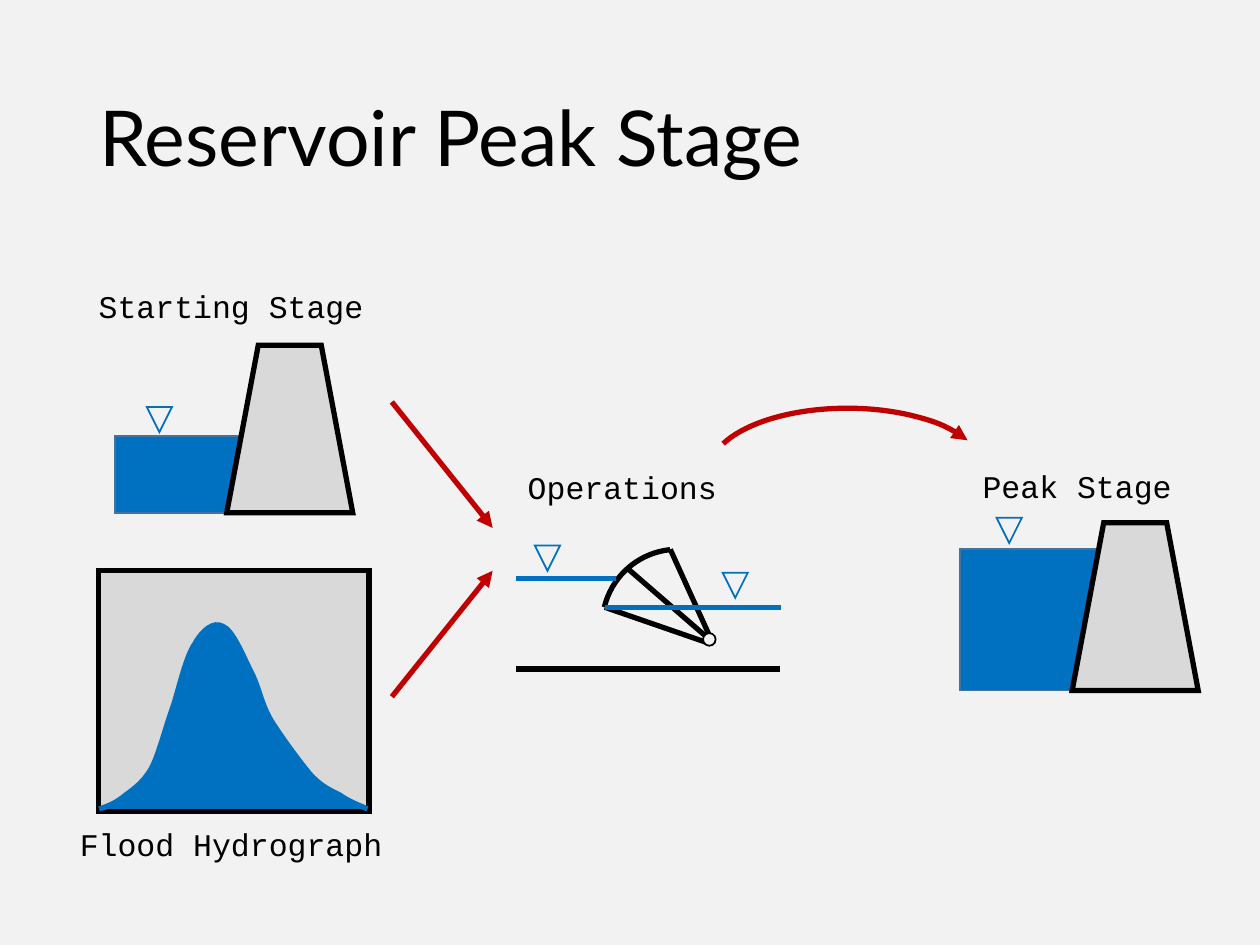
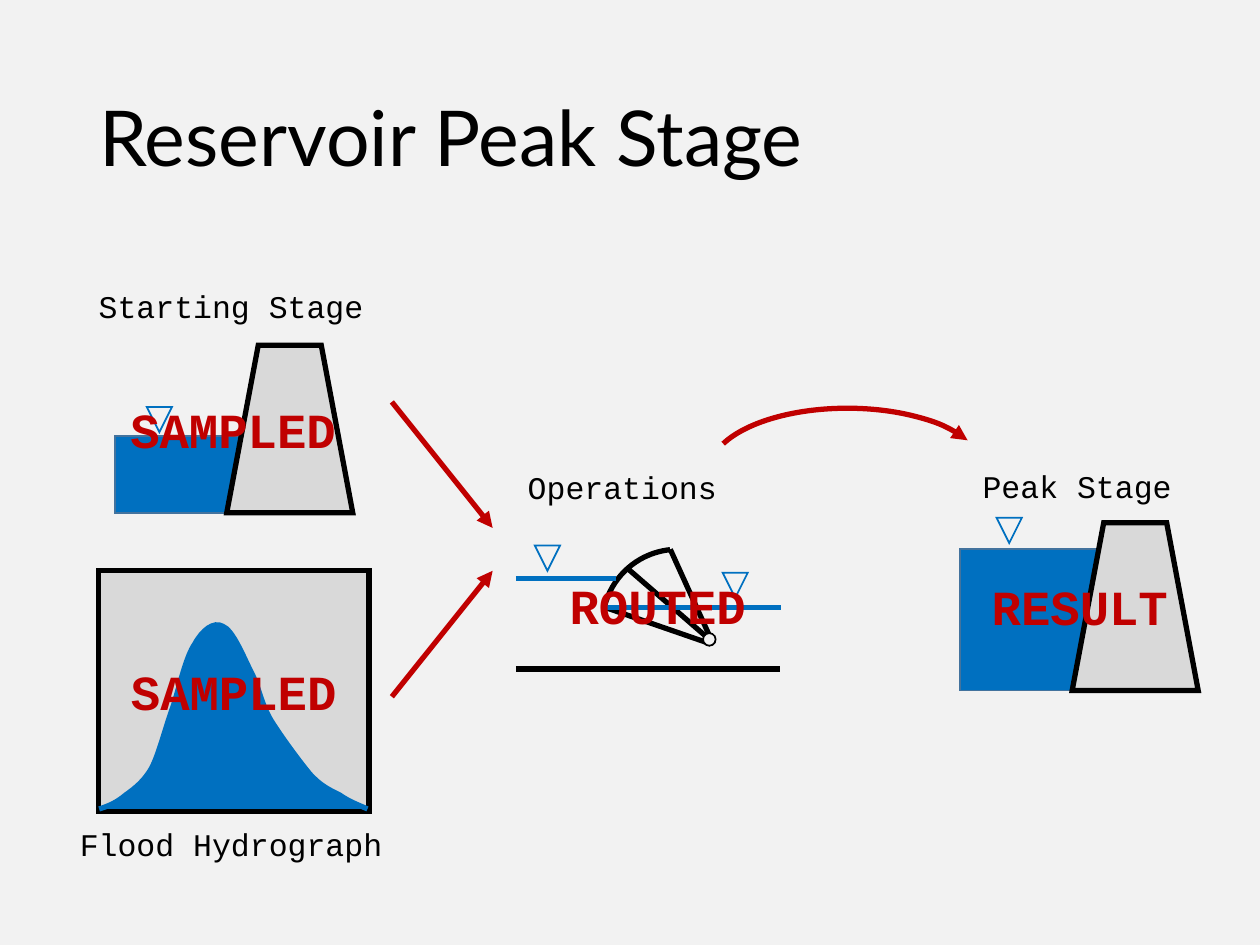
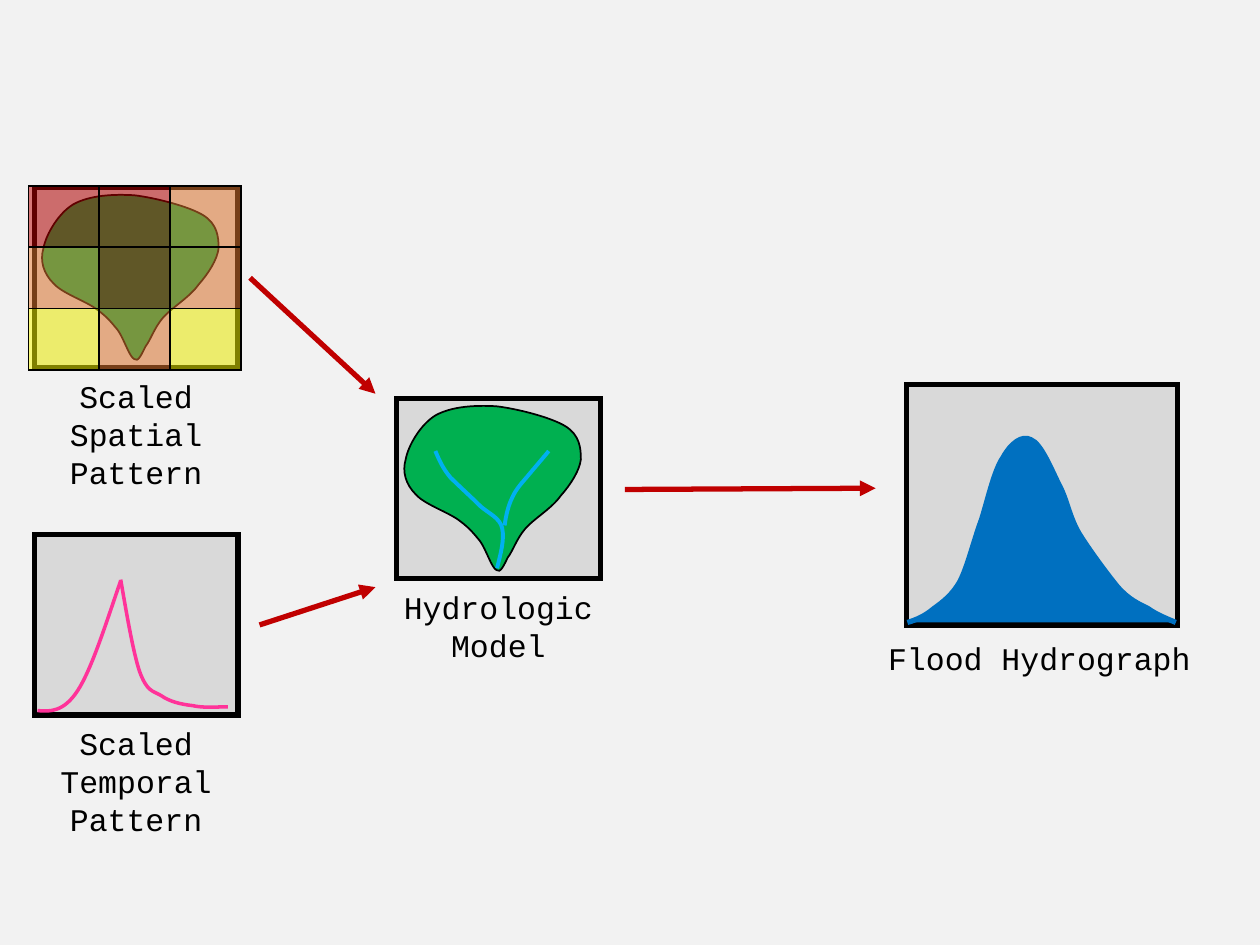
import pptx
import pptx.dml.color
import pptx.enum.shapes
import pptx.enum.text
import pptx.oxml
import pptx.oxml.ns
import pptx.util

RGB = pptx.dml.color.RGBColor
SHAPE = pptx.enum.shapes.MSO_SHAPE
ALIGN = pptx.enum.text.PP_ALIGN
ANCHOR = pptx.enum.text.MSO_ANCHOR
qn = pptx.oxml.ns.qn

# Colours
PAPER = RGB(0xF2, 0xF2, 0xF2)
INK = RGB(0x00, 0x00, 0x00)
GREY = RGB(0xD9, 0xD9, 0xD9)
WATER = RGB(0x00, 0x70, 0xC0)
WATER_EDGE = RGB(0x43, 0x73, 0x9E)
RED = RGB(0xC0, 0x00, 0x00)
ORANGE = RGB(0xED, 0x7D, 0x31)
YELLOW = RGB(0xFF, 0xFF, 0x00)
GREEN = RGB(0x00, 0xB0, 0x50)
STREAM = RGB(0x00, 0xB0, 0xF0)
PINK = RGB(0xFF, 0x33, 0x99)

# Grid of square cells over a 10 x 7.5 inch slide
COLS, ROWS = 100, 75
THICK, THIN = 3, 1

# Curves as a start point followed by Bezier triples, relative to their frame
FLOOD = [
    (0, 18.9), (0.7, 18.7), (1.4, 18.4), (2.1, 17.8), (2.8, 17.3), (3.6, 16.7),
    (4.2, 15.6), (4.8, 14.4), (5.3, 12.3), (5.9, 10.7), (6.4, 9.1), (6.9, 6.8),
    (7.6, 5.8), (8.2, 4.7), (9.1, 4), (9.8, 4.4), (10.6, 4.7), (11.4, 6.7),
    (12, 7.9), (12.7, 9.2), (12.8, 10.4), (13.6, 11.8), (14.4, 13.1), (15.8, 15),
    (16.7, 16.1), (17.6, 17.1), (18.3, 17.4), (19.1, 17.8), (19.8, 18.3),
    (20.6, 18.6), (21.3, 18.9)]
BASIN = [
    (7.9, 13.6), (7.5, 13.4), (7.1, 12), (6.6, 11.3), (6.1, 10.7), (5.8, 10.3),
    (5, 9.7), (4.1, 9), (2.2, 8.4), (1.5, 7.6), (0.7, 6.8), (0.4, 5.8),
    (0.7, 4.8), (0.9, 3.7), (1.9, 2), (3.1, 1.3), (4.4, 0.6), (6.2, 0.5),
    (7.9, 0.6), (9.6, 0.8), (12.3, 1.5), (13.4, 2.2), (14.5, 2.9), (14.6, 3.9),
    (14.6, 4.8), (14.5, 5.7), (13.8, 6.8), (13, 7.7), (12.3, 8.7), (10.9, 9.5),
    (10.2, 10.3), (9.5, 11.1), (9.2, 12.1), (8.8, 12.6), (8.5, 13.2),
    (8.2, 13.9), (7.9, 13.6)]
MAIN_STREAM = [
    (8, 13.4), (8.3, 12.2), (8.6, 11.1), (8.4, 10.2), (8.2, 9.4), (7.4, 9.1),
    (6.7, 8.5), (6, 7.8), (5, 6.9), (4.3, 6.2), (3.7, 5.5), (3.4, 4.8), (3.1, 4.1)]
BRANCH = [
    (8.6, 10), (8.7, 9.2), (8.9, 8.4), (9.2, 7.8), (9.5, 7.1), (10, 6.6),
    (10.5, 6), (11, 5.4), (11.6, 4.7), (12.1, 4.1)]
RISING_RAIN = [
    (0.3, 13.9), (1.3, 14), (2.4, 14), (3.5, 12.3), (4.6, 10.6), (5.7, 7.1), (6.9, 3.6)]
FALLING_RAIN = [
    (6.9, 3.5), (7.4, 6.4), (7.9, 9.3), (8.4, 10.8), (9, 12.4), (9.4, 12.3),
    (10.1, 12.7), (10.8, 13.2), (11.7, 13.4), (12.6, 13.5), (13.5, 13.7),
    (14.4, 13.6), (15.4, 13.6)]


def xml(tag, attributes=""):
    return pptx.oxml.parse_xml("<a:%s %s %s/>" % (tag, pptx.oxml.ns.nsdecls("a"), attributes))


def bend(sp):
    """Turn each three line segments of a freeform into one Bezier curve."""
    segments = list(sp.element.iter(qn("a:lnTo")))
    for i in range(0, len(segments), 3):
        bezier = xml("cubicBezTo")
        segments[i].addprevious(bezier)
        for segment in segments[i:i + 3]:
            bezier.append(segment[0])
            segment.getparent().remove(segment)


class Deck:
    """Holds the style and the slide, or group, being drawn on."""

    def __init__(self):
        self.prs = pptx.Presentation()
        self.prs.slide_width = pptx.util.Inches(10)
        self.prs.slide_height = pptx.util.Inches(7.5)

    def new_slide(self):
        self.slide = self.prs.slides.add_slide(self.prs.slide_layouts[6])
        self.slide.background.fill.solid()
        self.slide.background.fill.fore_color.rgb = PAPER
        self.end_group()

    def group(self):
        self.shapes = self.slide.shapes.add_group_shape().shapes

    def end_group(self):
        self.shapes = self.slide.shapes

    def emu(self, *lengths):
        """Grid units to EMU, taken alternately across and down."""
        cell = (self.prs.slide_width / COLS, self.prs.slide_height / ROWS)
        return [round(v * cell[i % 2]) for i, v in enumerate(lengths)]

    def stroke(self, sp, color, width, arrow=False):
        sp.line.color.rgb = color
        sp.line.width = pptx.util.Pt(width)
        ln = sp.element.spPr.find(qn("a:ln"))
        ln.append(xml("miter", 'lim="800000"'))
        if arrow:
            ln.append(xml("tailEnd", 'type="triangle"'))

    def paint(self, sp, fill, color, width, alpha=None, arrow=False):
        sp.shadow.inherit = False
        if fill is None:
            sp.fill.background()
        else:
            sp.fill.solid()
            sp.fill.fore_color.rgb = fill
        if alpha is not None:
            clr = sp.element.spPr.find(qn("a:solidFill"))[0]
            clr.append(xml("alpha", 'val="%d"' % (alpha * 1000)))
        self.stroke(sp, color, width, arrow)
        return sp

    def shape(self, kind, x, y, w, h, fill=None, color=INK, width=THICK, alpha=None):
        sp = self.shapes.add_shape(kind, *self.emu(x, y, w, h))
        return self.paint(sp, fill, color, width, alpha)

    def arc(self, x, y, w, h, start, end, color=INK, arrow=False):
        sp = self.shapes.add_shape(SHAPE.ARC, *self.emu(x, y, w, h))
        for i, degrees in enumerate((start, end)):
            sp.adjustments[i] = degrees * 0.6
        self.paint(sp, None, color, THICK, arrow=arrow)

    def curve(self, x, y, points, fill=None, color=INK, width=THICK, close=False):
        first, *rest = [self.emu(x + px, y + py) for px, py in points]
        builder = self.shapes.build_freeform(*first, scale=1.0)
        builder.add_line_segments(rest, close=close)
        sp = builder.convert_to_shape()
        bend(sp)
        self.paint(sp, fill, color, width)

    def line(self, x1, y1, x2, y2, color=INK, arrow=False):
        kind = pptx.enum.shapes.MSO_CONNECTOR.STRAIGHT
        sp = self.shapes.add_connector(kind, *self.emu(x1, y1, x2, y2))
        self.stroke(sp, color, THICK, arrow)
        sp.element.spPr.append(xml("effectLst"))

    def arrow(self, x1, y1, x2, y2):
        self.line(x1, y1, x2, y2, RED, arrow=True)

    def text(self, words, x, y, w, h, size=18, font="Courier New", color=INK, bold=False,
             align=ALIGN.LEFT, anchor=ANCHOR.TOP, wrap=False, spacing=None):
        tf = self.shapes.add_textbox(*self.emu(x, y, w, h)).text_frame
        tf.word_wrap = wrap
        tf.vertical_anchor = anchor
        p = tf.paragraphs[0]
        p.alignment = align
        p.line_spacing = spacing
        r = p.add_run()
        r.text = words
        r.font.size = pptx.util.Pt(size)
        r.font.name = font
        r.font.bold = bold
        r.font.color.rgb = color

    def title(self, words):
        self.text(words, 6.88, 4, 86.25, 14.5, size=44, font="Lato",
                  anchor=ANCHOR.MIDDLE, wrap=True, spacing=0.9)

    def label(self, words, x, y, w):
        self.text(words, x, y, w, 4)

    def caption(self, words, x, y, w, h):
        self.text(words, x, y, w, h, align=ALIGN.CENTER, wrap=True)

    def stamp(self, words, x, y, w):
        self.text(words, x, y, w, 5.7, size=28, color=RED, bold=True,
                  align=ALIGN.CENTER, anchor=ANCHOR.MIDDLE)

    # Recurring drawings
    def level_mark(self, x, y):
        self.shape(SHAPE.ISOSCELES_TRIANGLE, x, y, 2, 2, color=WATER, width=THIN).rotation = 180

    def dam(self, x, y, depth, mark_x, mark_y):
        height = 13.3
        self.group()
        self.shape(SHAPE.RECTANGLE, x - 8.9, y + height - depth, 12.2, depth,
                   WATER, WATER_EDGE, THIN)
        self.shape(SHAPE.TRAPEZOID, x, y, 10, height, GREY)
        self.level_mark(mark_x, mark_y)
        self.end_group()

    def hydrograph(self, x, y):
        self.group()
        self.shape(SHAPE.RECTANGLE, x, y, 21.5, 19.1, GREY)
        self.curve(x + 0.07, y, FLOOD, WATER, WATER)
        self.end_group()
        self.label("Flood Hydrograph", x - 2.45, y + 19.7, 26.4)

    def panel(self, x, y):
        self.shape(SHAPE.RECTANGLE, x, y, 16.15, 14.3, GREY)

    def basin(self, x, y):
        self.panel(x, y)
        self.curve(x, y, BASIN, GREEN, width=THIN, close=True)

    def gate(self):
        self.group()
        self.line(40.95, 53.1, 61.9, 53.1)
        self.arc(47.8, 43.6, 12, 12, 193.5, 264.1)
        self.line(48, 48.2, 56.4, 51.1)
        self.line(53.2, 43.6, 56.6, 51.1)
        self.line(40.95, 45.9, 48.9, 45.9, WATER)
        self.line(49.9, 45.2, 56.6, 51)
        self.line(48, 48.2, 62, 48.2, WATER)
        self.level_mark(42.45, 43.3)
        self.level_mark(57.35, 45.45)
        self.shape(SHAPE.OVAL, 55.8, 50.25, 1, 1, PAPER, width=THIN)
        self.end_group()


def reservoir_slide(d, stamps=()):
    d.new_slide()
    d.title("Reservoir Peak Stage")
    # Inputs
    d.label("Starting Stage", 6.85, 22.3, 23.4)
    d.hydrograph(7.8, 45.3)
    d.arrow(31.1, 31.9, 39.1, 41.9)
    d.arrow(31.1, 55.3, 39.1, 45.3)
    # Operations and result
    d.label("Operations", 40.9, 36.65, 17.3)
    d.label("Peak Stage", 77, 36.6, 17.3)
    d.arc(56.3, 32.4, 21.9, 10, 192.5, 345.6, RED, arrow=True)
    d.dam(18, 27.4, 6.1, 11.65, 32.3)
    d.dam(85.1, 41.5, 11.2, 79.1, 41.1)
    d.gate()
    for stamp in stamps:
        d.stamp(*stamp)


def model_slide(d):
    d.new_slide()
    # Spatial pattern: rainfall cells over the basin
    d.group()
    d.basin(2.75, 14.9)
    cells = [(RED, RED, ORANGE), (ORANGE, RED, ORANGE), (YELLOW, ORANGE, YELLOW)]
    cell_w, cell_h = 5.62, 4.87
    for row, colors in enumerate(cells):
        for col, color in enumerate(colors):
            d.shape(SHAPE.RECTANGLE, 2.27 + col * cell_w, 14.75 + row * cell_h,
                    cell_w, cell_h, color, width=THIN, alpha=50)
    d.caption("Scaled Spatial Pattern", 1, 29.45, 19.6, 10.1)
    # Temporal pattern
    d.group()
    d.panel(2.75, 42.45)
    for rain in (RISING_RAIN, FALLING_RAIN):
        d.curve(2.68, 42.5, rain, color=PINK, width=2)
    d.caption("Scaled Temporal Pattern", 0.45, 57, 20.7, 10.1)
    # Hydrologic model
    d.group()
    d.caption("Hydrologic Model", 29.75, 46.2, 19.6, 7.1)
    d.basin(31.5, 31.65)
    for stream in (MAIN_STREAM, BRANCH):
        d.curve(31.45, 31.7, stream, color=STREAM, width=2.25)
    d.end_group()
    # Flow to the flood hydrograph
    d.arrow(19.85, 22.05, 29.8, 31.25)
    d.arrow(20.6, 49.6, 29.8, 46.6)
    d.hydrograph(71.95, 30.5)
    d.arrow(49.6, 38.85, 69.5, 38.75)


def main():
    d = Deck()
    reservoir_slide(d)
    reservoir_slide(d, [("SAMPLED", 9.2, 31.2, 18.6), ("SAMPLED", 9.25, 51.95, 18.6),
                        ("ROUTED", 44.1, 45.15, 16.2), ("RESULT", 77.6, 45.25, 16.2)])
    model_slide(d)
    d.prs.save("out.pptx")


if __name__ == "__main__":
    main()
